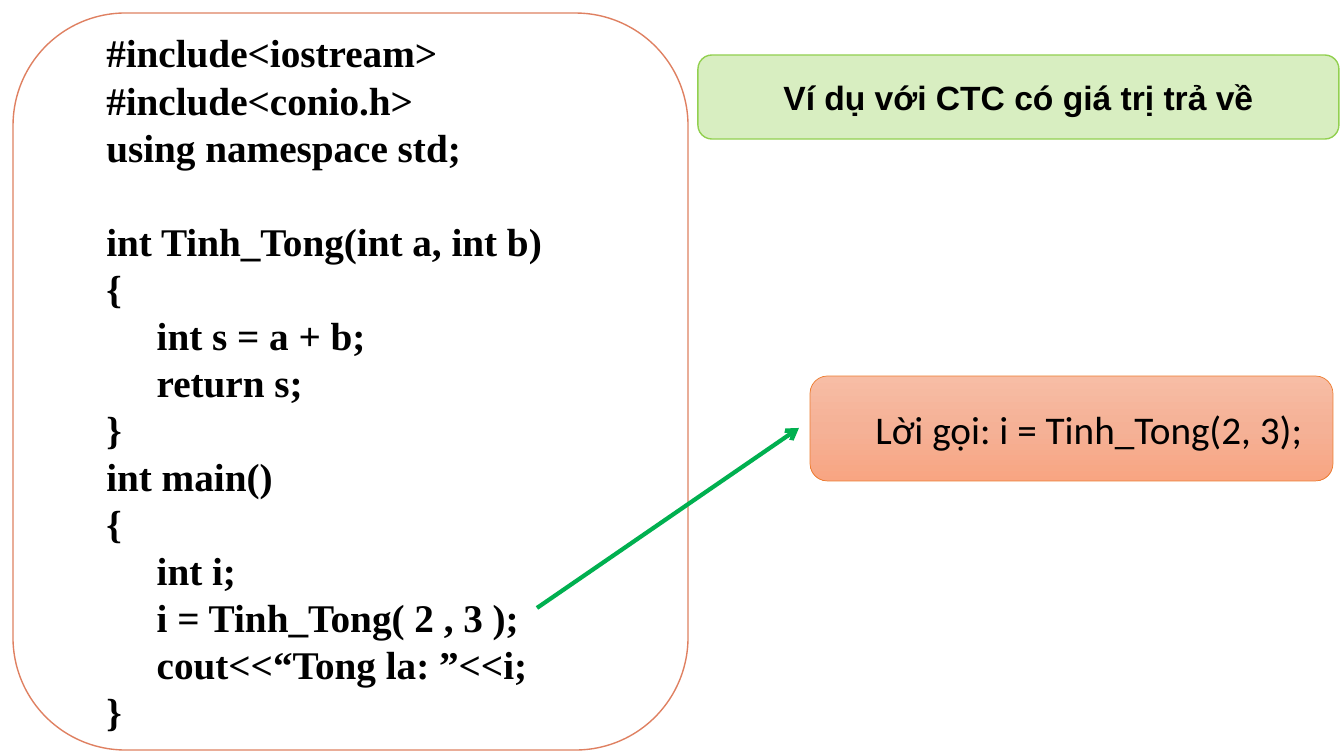
import copy

import pptx
import pptx.dml.color
import pptx.enum.shapes
import pptx.enum.text
import pptx.oxml
import pptx.oxml.ns
import pptx.util

RGBColor = pptx.dml.color.RGBColor
BLACK = RGBColor(0x00, 0x00, 0x00)
LIME = RGBColor(0x92, 0xD0, 0x50)
RED = RGBColor(0xCC, 0x33, 0x00)
GREEN = RGBColor(0x00, 0xB0, 0x50)
ORANGE = RGBColor(0xED, 0x7D, 0x31)
CALL_STOPS = [
    (0, RGBColor(0xF7, 0xBD, 0xA5)),
    (0.5, RGBColor(0xF5, 0xB1, 0x96)),
    (1, RGBColor(0xF8, 0xA5, 0x82)),
]

PX = 914400 / 100.8
INDENT = pptx.util.Inches(0.5)
CODE_LINE = pptx.util.Pt(33.6)

# (indent level, text, blank lines above)
CODE = [
    (1, "#include<iostream>", 0),
    (1, "#include<conio.h>", 0),
    (1, "using namespace std;", 0),
    (1, "int Tinh_Tong(int a, int b)", 1),
    (1, "{", 0),
    (2, "int s = a + b;", 0),
    (2, "return s;", 0),
    (1, "}", 0),
    (1, "int main()", 0),
    (1, "{", 0),
    (2, "int i;", 0),
    (2, "i = Tinh_Tong( 2 , 3 );", 0),
    (2, "cout<<“Tong la: ”<<i;", 0),
    (1, "}", 0),
]


def add_box(left, top, width, height, line_color, line_width, lines, font, size, bold):
    """Add a rounded box whose lines are (indent level, text, blank lines above)."""
    sp = s.shapes.add_shape(
        pptx.enum.shapes.MSO_SHAPE.ROUNDED_RECTANGLE,
        *(round(v * PX) for v in (left, top, width, height)))
    sp.shadow.inherit = False
    sp.fill.background()
    sp.line.color.rgb = line_color
    sp.line.width = pptx.util.Pt(line_width)
    tf = sp.text_frame
    tf.word_wrap = True
    tf.vertical_anchor = pptx.enum.text.MSO_ANCHOR.MIDDLE
    tf.text = "\n".join(text for _, text, _ in lines)
    for p, (level, _, blanks) in zip(tf.paragraphs, lines):
        p.alignment = pptx.enum.text.PP_ALIGN.LEFT
        p.level = level
        p._p.get_or_add_pPr().set("marL", str(level * INDENT))
        p._p.get_or_add_pPr().set("indent", "0")
        if blanks:
            p.space_before = blanks * CODE_LINE
        r = p.runs[0]
        r.font.name = font
        r.font.size = pptx.util.Pt(size)
        r.font.bold = bold
        r.font.color.rgb = BLACK
    return sp


def set_opacity(fill, percent):
    color = fill._xPr.find(".//" + pptx.oxml.ns.qn("a:srgbClr"))
    alpha = color.makeelement(pptx.oxml.ns.qn("a:alpha"), {"val": str(percent * 1000)})
    color.append(alpha)


prs = pptx.Presentation()
prs.slide_width = round(1344 * PX)
prs.slide_height = round(756 * PX)
s = prs.slides.add_slide(prs.slide_layouts[6])

# Title
title = add_box(698, 55, 641, 84, LIME, 1,
                [(0, "Ví dụ với CTC có giá trị trả về", 0)], "Arial", 24, True)
title.text_frame.paragraphs[0].alignment = pptx.enum.text.PP_ALIGN.CENTER
title.fill.solid()
title.fill.fore_color.rgb = LIME
set_opacity(title.fill, 35)

# Program listing
code = add_box(13, 13, 675, 737, RED, 1, CODE, "Times New Roman", 28, True)
set_opacity(code.line.fill, 61)
for p in code.text_frame.paragraphs:
    p.line_spacing = CODE_LINE

# Arrow from the calling line to its explanation
arrow = s.shapes.add_connector(
    pptx.enum.shapes.MSO_CONNECTOR.STRAIGHT,
    *(round(v * PX) for v in (537, 608, 799, 428)))
arrow.line.color.rgb = GREEN
arrow.line.width = pptx.util.Pt(3)
ln = arrow.line._get_or_add_ln()
ln.append(ln.makeelement(pptx.oxml.ns.qn("a:tailEnd"), {"type": "arrow"}))
sp_pr = arrow._element.spPr
sp_pr.append(sp_pr.makeelement(pptx.oxml.ns.qn("a:effectLst"), {}))

# Function call
call = add_box(810, 376, 523, 105, ORANGE, 0.5,
               [(1, "Lời gọi: i = Tinh_Tong(2, 3);", 0)], "Calibri", 28, False)
call.fill.gradient()
call.fill.gradient_angle = 270
first_stop = call._element.spPr.find(".//" + pptx.oxml.ns.qn("a:gs"))
first_stop.addnext(copy.deepcopy(first_stop))
for stop, (position, color) in zip(call.fill.gradient_stops, CALL_STOPS):
    stop.position = position
    stop.color.rgb = color

prs.save("out.pptx")
